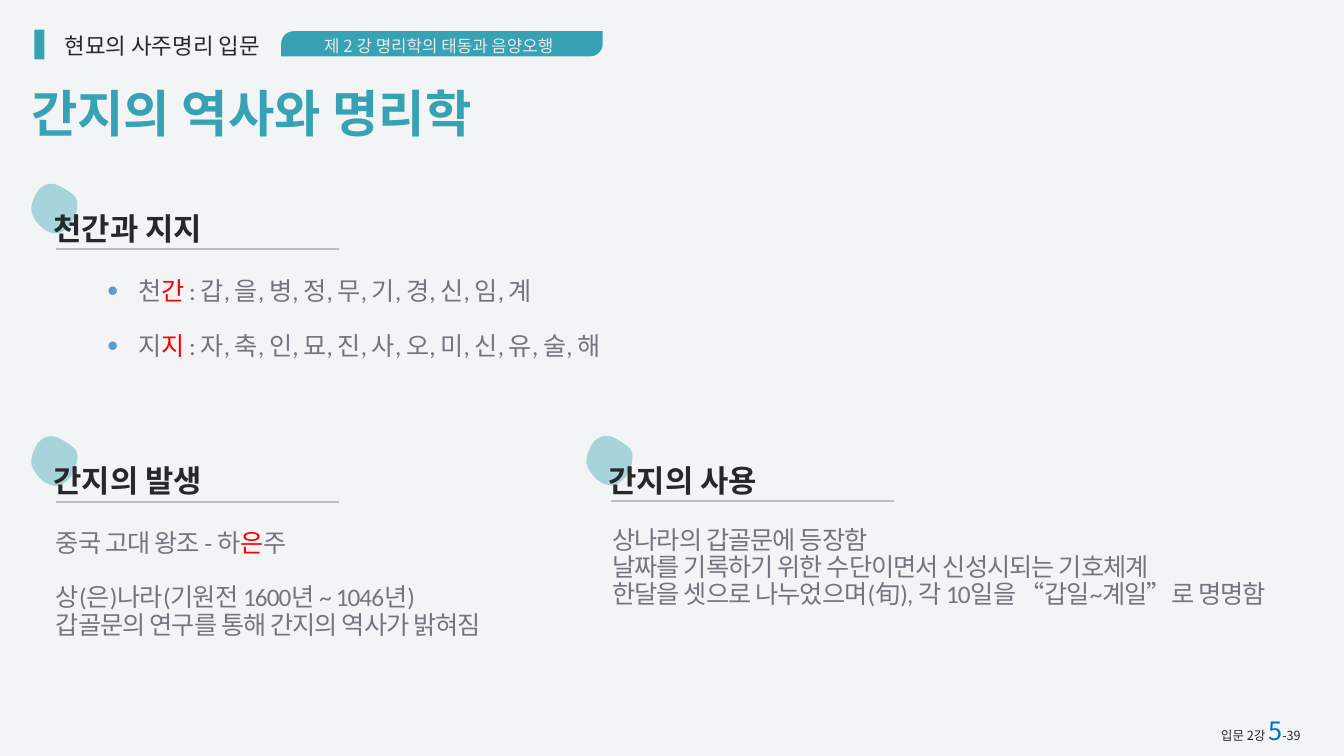
import pptx
import pptx.util
import pptx.dml.color
import pptx.enum.shapes
import pptx.enum.text
import pptx.oxml
import pptx.oxml.ns

Cm, Pt = pptx.util.Cm, pptx.util.Pt
RGBColor = pptx.dml.color.RGBColor
SHAPE = pptx.enum.shapes.MSO_SHAPE
ALIGN = pptx.enum.text.PP_ALIGN
qn = pptx.oxml.ns.qn

TEAL = RGBColor(0x36, 0xA2, 0xB4)
INK = RGBColor(0x28, 0x28, 0x2C)
GREY = RGBColor(0x75, 0x75, 0x81)
RED = RGBColor(0xFF, 0x00, 0x00)
BLUE = RGBColor(0x00, 0x70, 0xC0)
PALE = RGBColor(0xE8, 0xEA, 0xEE)
RULE = RGBColor(0xBF, 0xBF, 0xBF)
KOREAN = "Noto Sans CJK KR"
WIDTH, HEIGHT = 67.74, 38.1

# Blob outline in cm: start point, then cubic curves (two controls and an end)
BLOB_START = (0, 1.37)
BLOB_CURVES = [
    ((-0.03, 1.07), (0.10, 0.69), (0.36, 0.30)),
    ((0.56, 0.10), (0.81, -0.05), (1.12, 0)),
    ((1.42, 0.05), (1.96, 0.41), (2.18, 0.61)),
    ((2.39, 0.84), (2.36, 1.32), (2.13, 1.80)),
    ((1.98, 2.16), (1.65, 2.41), (1.37, 2.49)),
    ((1.12, 2.54), (0.74, 2.41), (0.51, 2.18)),
    ((0.30, 1.98), (0.05, 1.68), BLOB_START),
]


def xml(tag, attrs="", inner=""):
    ns = pptx.oxml.ns.nsdecls("a")
    return pptx.oxml.parse_xml(f"<a:{tag} {ns} {attrs}>{inner}</a:{tag}>")


def add_run(p, text, spacing=None, **fmt):
    r = p.add_run()
    r.text = text
    color = fmt.pop("color")
    for name, value in {"name": KOREAN, **fmt}.items():
        setattr(r.font, name, value)
    r.font.color.rgb = color
    if spacing is not None:
        r.font._element.set("spc", str(spacing))


def add_box(shapes, box, wrap=True):
    sp = shapes.add_textbox(*map(Cm, box))
    sp.text_frame.word_wrap = wrap
    return sp.text_frame


def add_label(shapes, box, runs, align=ALIGN.LEFT, wrap=True):
    p = add_box(shapes, box, wrap).paragraphs[0]
    p.alignment = align
    for text, fmt in runs:
        add_run(p, text, **fmt)


def add_bullet(p):
    pPr = p._p.get_or_add_pPr()
    pPr.set("marL", str(Cm(1.55)))
    pPr.set("indent", str(-Cm(1.55)))
    pPr.append(xml("buClr", inner='<a:srgbClr val="5B9BD5"/>'))
    pPr.append(xml("buSzPct", 'val="123000"'))
    pPr.append(xml("buFont", 'typeface="Arial"'))
    pPr.append(xml("buChar", 'char="•"'))


def add_body(shapes, box, lines, gap_before=(), bullets=False):
    """Body text; gap_before holds the indexes of lines set one line lower."""
    tf = add_box(shapes, box)
    for side in ("left", "top", "right", "bottom"):
        setattr(tf, f"margin_{side}", Cm(0.15))
    for i, line in enumerate(lines):
        p = tf.paragraphs[0] if i == 0 else tf.add_paragraph()
        p.line_spacing = 0.9
        if i in gap_before:
            p.space_before = Pt(39)
        if bullets:
            add_bullet(p)
        for text, color in line:
            add_run(p, text, spacing=-130, name="Calibri", size=Pt(36), color=color)


def fill_flat(sp, color, alpha=None):
    sp.shadow.inherit = False
    sp.fill.solid()
    sp.fill.fore_color.rgb = color
    sp.line.fill.background()
    if alpha is not None:
        clr = sp._element.spPr.find(f".//{qn('a:srgbClr')}")
        clr.append(xml("alpha", f'val="{alpha * 1000}"'))


def add_flat_shape(shapes, kind, box, color=TEAL, alpha=None):
    sp = shapes.add_shape(kind, *map(Cm, box))
    fill_flat(sp, color, alpha)
    return sp


def add_blob(shapes, x, y):
    points = [(Cm(x + px), Cm(y + py)) for curve in BLOB_CURVES for px, py in curve]
    builder = shapes.build_freeform(*points[-1])
    builder.add_line_segments(points, close=True)
    sp = builder.convert_to_shape()
    # Join every three straight segments into one cubic curve
    segments = list(sp._element.spPr.iter(qn("a:lnTo")))
    for i in range(0, len(segments), 3):
        curve = xml("cubicBezTo")
        segments[i].addprevious(curve)
        for segment in segments[i:i + 3]:
            curve.append(segment[0])
            segment.getparent().remove(segment)
    fill_flat(sp, TEAL, alpha=40)


def add_section(shapes, x, y, heading):
    line = shapes.add_connector(pptx.enum.shapes.MSO_CONNECTOR.STRAIGHT,
                                Cm(x + 0.38), Cm(y + 2.12), Cm(x + 14.63), Cm(y + 2.12))
    line.line.color.rgb = RULE
    line.line.width = Pt(3)
    line._element.spPr.append(xml("effectLst"))
    add_blob(shapes, x - 0.86, y - 1.17)
    add_label(shapes, (x, y, 12.27, 2.13),
              [(heading, dict(size=Pt(44), bold=True, color=INK))])


def add_title(slide, text):
    sp = slide.shapes.title
    box = dict(left=Cm(1.32), top=Cm(3.99), width=Cm(24.16), height=Cm(3.33))
    for name, value in box.items():
        setattr(sp, name, value)
    tf = sp.text_frame
    tf.word_wrap = True
    tf.auto_size = pptx.enum.text.MSO_AUTO_SIZE.NONE
    tf.vertical_anchor = pptx.enum.text.MSO_ANCHOR.TOP
    p = tf.paragraphs[0]
    p.alignment = ALIGN.LEFT
    add_run(p, text, size=Pt(72), bold=True, color=TEAL)


def add_backdrop(shapes):
    sp = add_flat_shape(shapes, SHAPE.RECTANGLE, (0, 0, WIDTH, HEIGHT), PALE, alpha=50)
    shapes.title._element.addprevious(sp._element)


def add_header(shapes):
    add_label(shapes, (2.67, 1.47, 11.02, 1.63),
              [("현묘의 사주명리 입문", dict(size=Pt(32), color=INK))], ALIGN.CENTER, wrap=False)
    add_flat_shape(shapes, SHAPE.RECTANGLE, (1.73, 1.5, 0.51, 1.5))
    badge = shapes.add_group_shape().shapes
    sp = add_flat_shape(badge, SHAPE.ROUND_2_DIAG_RECTANGLE, (14.17, 1.57, 16.21, 1.27))
    sp.adjustments[0] = 0.5
    add_label(badge, (14.71, 1.65, 14.81, 2.31),
              [("제 2 강 명리학의 태동과 음양오행", dict(size=Pt(24), color=PALE))], ALIGN.CENTER)


def main():
    prs = pptx.Presentation()
    prs.slide_width, prs.slide_height = Cm(WIDTH), Cm(HEIGHT)
    s = prs.slides.add_slide(prs.slide_layouts[5])

    # Backdrop, header and title
    add_backdrop(s.shapes)
    add_header(s.shapes)
    add_title(s, "간지의 역사와 명리학")

    # Stems and branches
    add_section(s.shapes, 2.44, 10.44, "천간과 지지")
    add_body(s.shapes, (5.26, 13.92, 39.22, 4.47), [
        [("천", GREY), ("간 ", RED), (": 갑, 을, 병, 정, 무, 기, 경, 신, 임, 계", GREY)],
        [("지", GREY), ("지 ", RED), (": 자, 축, 인, 묘, 진, 사, 오, 미, 신, 유, 술, 해", GREY)],
    ], gap_before=(1,), bullets=True)

    # Origin
    add_section(s.shapes, 2.44, 23.16, "간지의 발생")
    add_body(s.shapes, (2.67, 26.59, 22.81, 5.87), [
        [("중국 고대 왕조 - 하", GREY), ("은", RED), ("주", GREY)],
        [("상(은)나라(기원전 1600년 ~ 1046년)", GREY)],
        [("갑골문의 연구를 통해 간지의 역사가 밝혀짐", GREY)],
    ], gap_before=(1,))

    # Use
    add_section(s.shapes, 30.42, 23.14, "간지의 사용")
    add_body(s.shapes, (30.71, 26.44, 36.2, 4.47), [
        [("상나라의 갑골문에 등장함", GREY)],
        [("날짜를 기록하기 위한 수단이면서 신성시되는 기호체계", GREY)],
        [("한달을 셋으로 나누었으며(旬), 각 10일을 “갑일~계일”로 명명함", GREY)],
    ])

    # Page label
    small = dict(size=Pt(18), color=INK)
    add_label(s.shapes, (61.29, 35.92, 7.7, 1.8),
              [("입문 2강 ", small), ("5", dict(size=Pt(36), color=BLUE)), ("-39", small)])
    prs.save("out.pptx")


if __name__ == "__main__":
    main()
